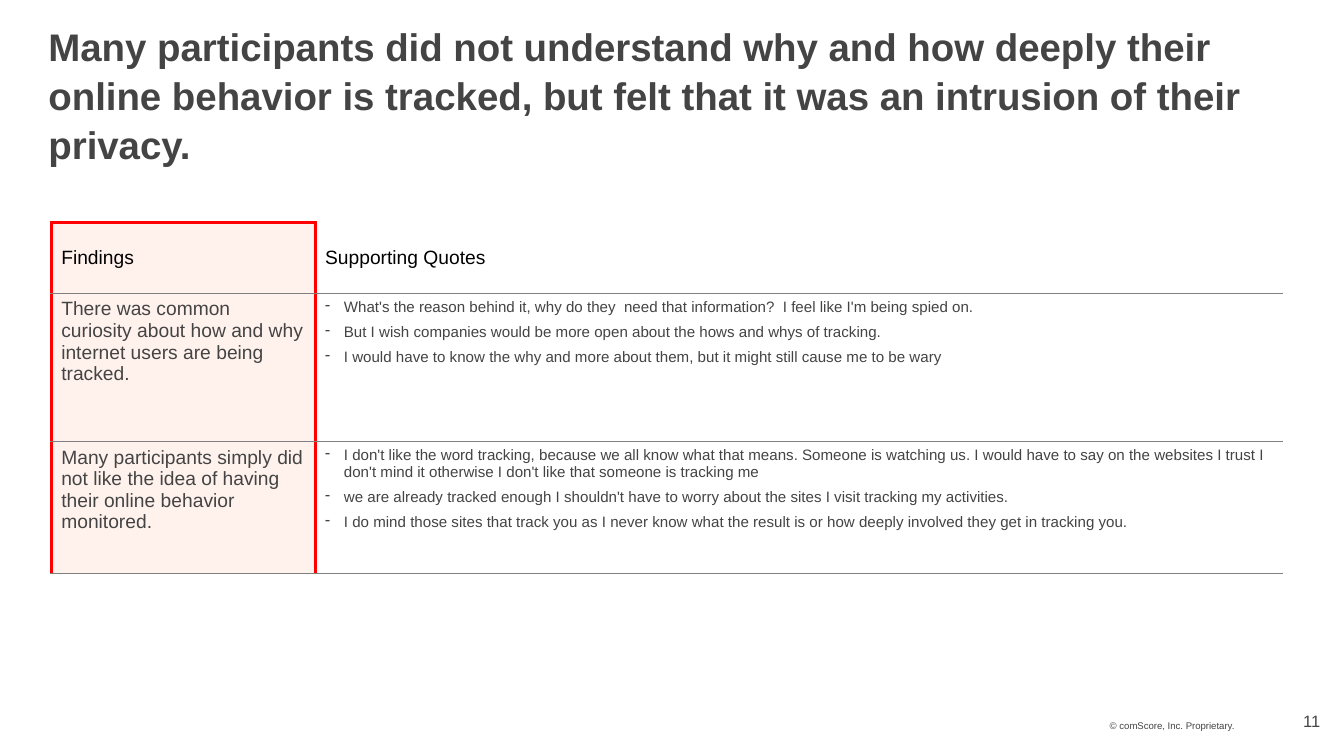
from lxml import etree
from pptx import Presentation
from pptx import util as u
from pptx.dml.color import RGBColor
from pptx.enum import text
from pptx.oxml.ns import qn

COLS, ROWS = 136, 76.5
INK, RED, GREY, PINK = "444444", "FF0000", "808080", "FFCFB8"

deck = Presentation()
deck.slide_width = u.Inches(13.6)
deck.slide_height = u.Inches(7.65)
col = deck.slide_width / COLS
row = deck.slide_height / ROWS
slide = deck.slides.add_slide(deck.slide_layouts[6])


def paint(target, color):
    target.rgb = RGBColor.from_string(color)


def write(para, words, size, color=INK, bold=False):
    run = para.add_run()
    run.text = words
    run.font.name = "Arial"
    run.font.size = u.Pt(size)
    run.font.bold = bold
    paint(run.font.color, color)


top, low = text.MSO_ANCHOR.TOP, text.MSO_ANCHOR.BOTTOM
left, right = text.PP_ALIGN.LEFT, text.PP_ALIGN.RIGHT
title = (
    "Many participants did not understand why and how deeply their online "
    "behavior is tracked, but felt that it was an intrusion of their privacy."
)
boxes = [
    (title, 3.7, 2.1, 130, 13.1, 1.2, 0, top, left, 28, True, 1.06),
    ("© comScore, Inc. Proprietary.", 112.3, 69.5, 15, 5.1, 0, 0.6, low, left, 7, False, u.Pt(7.9)),
    ("11", 125.2, 70.6, 10.8, 4, 2.4, 0.6, low, right, 12, False, 1.0),
]
for words, x, y, w, h, side, head, anchor, align, size, bold, pitch in boxes:
    box = slide.shapes.add_textbox(int(x * col), int(y * row), int(w * col), int(h * row))
    frame = box.text_frame
    frame.word_wrap = True
    frame.vertical_anchor = anchor
    frame.margin_left = frame.margin_right = int(side * col)
    frame.margin_top = int(head * row)
    frame.margin_bottom = int(0.6 * row)
    para = frame.paragraphs[0]
    para.alignment = align
    para.line_spacing = pitch
    write(para, words, size, bold=bold)

heads = ["Findings", "Supporting Quotes"]
finds = [
    (
        "There was common curiosity about how and why internet users are being tracked.",
        [
            "What's the reason behind it, why do they  need that information?  I feel like I'm being spied on.",
            "But I wish companies would be more open about the hows and whys of tracking.",
            "I would have to know the why and more about them, but it might still cause me to be wary",
        ],
    ),
    (
        "Many participants simply did not like the idea of having their online behavior monitored.",
        [
            "I don't like the word tracking, because we all know what that means. Someone is watching us. "
            "I would have to say on the websites I trust I don't mind it otherwise I don't like that "
            "someone is tracking me",
            "we are already tracked enough I shouldn't have to worry about the sites I visit tracking my activities.",
            "I do mind those sites that track you as I never know what the result is or how deeply "
            "involved they get in tracking you.",
        ],
    ),
]
wide, tall = [26.7, 97.9], [7.2, 15, 13.3]
grid = slide.shapes.add_table(
    len(tall), len(wide), int(5.2 * col), int(22.5 * row), int(sum(wide) * col), int(sum(tall) * row)
).table
grid.first_row = grid.horz_banding = False
grid._tbl.tblPr.find(qn("a:tableStyleId")).text = "{2D5ABB26-0587-4C30-8999-92F81FD0307C}"
for part, size in zip(grid.columns, wide):
    part.width = int(size * col)
for part, size in zip(grid.rows, tall):
    part.height = int(size * row)

for c, words in enumerate(heads):
    cell = grid.cell(0, c)
    cell.vertical_anchor = text.MSO_ANCHOR.MIDDLE
    write(cell.text_frame.paragraphs[0], words, 14, "000000")

for r, (find, quotes) in enumerate(finds, 1):
    para = grid.cell(r, 0).text_frame.paragraphs[0]
    para.space_after = u.Pt(12)
    write(para, find, 14)
    frame = grid.cell(r, 1).text_frame
    for n, quote in enumerate(quotes):
        para = frame.add_paragraph() if n else frame.paragraphs[0]
        para.space_after = u.Pt(6)
        props = para._p.get_or_add_pPr()
        props.set("marL", str(int(1.9 * col)))
        props.set("indent", str(int(-1.9 * col)))
        etree.SubElement(props, qn("a:buChar"), char="-")
        write(para, quote, 11)

for r in range(len(tall)):
    for c in range(len(wide)):
        cell = grid.cell(r, c)
        if c == 0:
            cell.fill.solid()
            paint(cell.fill.fore_color, PINK)
            tint = cell._tc.tcPr.find(".//" + qn("a:srgbClr"))
            etree.SubElement(tint, qn("a:alpha"), val="25000")
        else:
            cell.fill.background()
        edges = {"lnL": (RED, 2.25), "lnB": (GREY, 1)}
        if c == 0:
            edges["lnR"] = (RED, 2.25)
        if r:
            edges["lnT"] = (GREY, 1)
        elif c == 0:
            edges["lnT"] = (RED, 2.25)
        spot = 0
        for side in ["lnL", "lnR", "lnT", "lnB"]:
            if side in edges:
                color, size = edges[side]
                line = etree.Element(qn("a:" + side), w=str(u.Pt(size)))
                fill = etree.SubElement(line, qn("a:solidFill"))
                etree.SubElement(fill, qn("a:srgbClr"), val=color)
                cell._tc.tcPr.insert(spot, line)
                spot += 1

deck.save("out.pptx")
